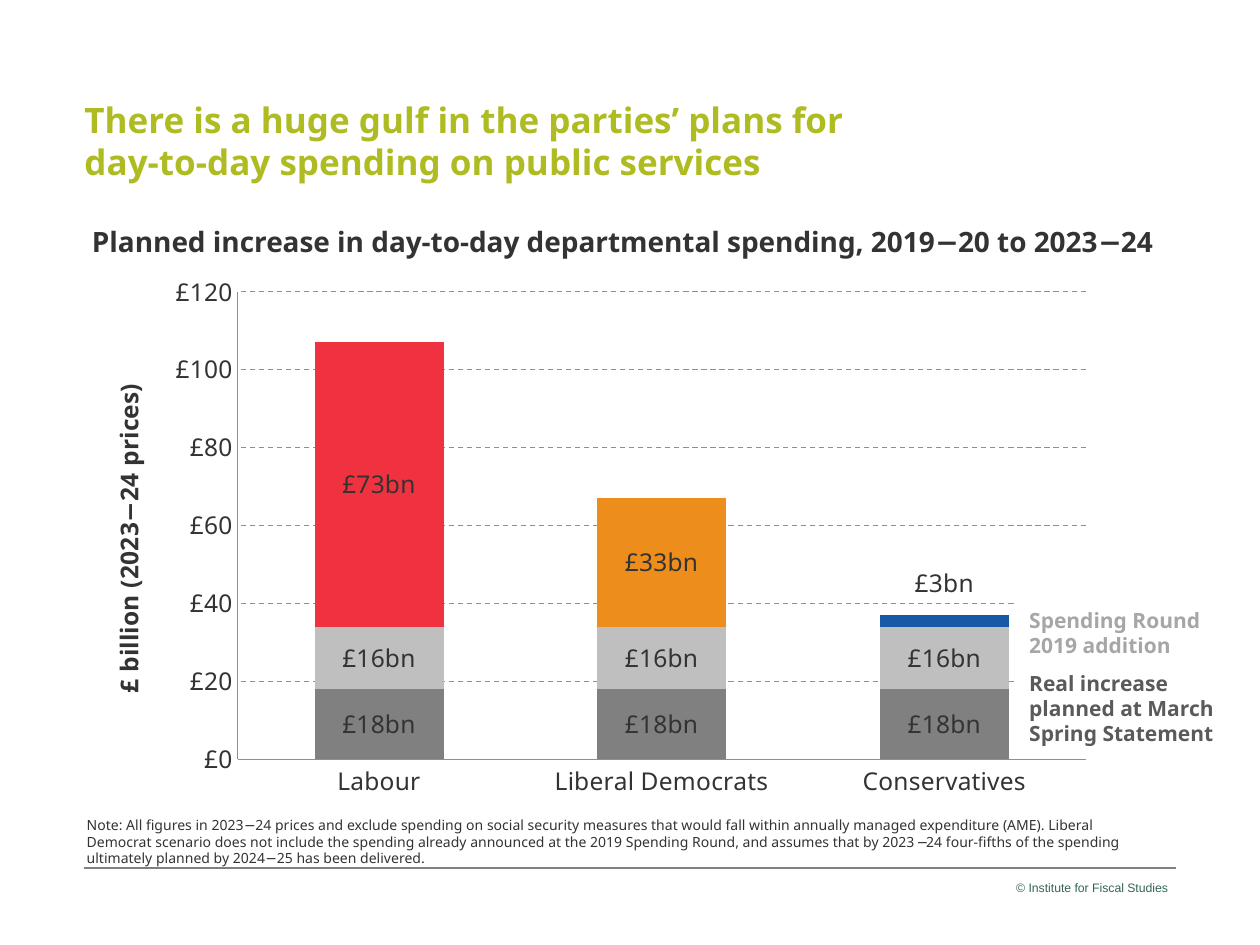
"""Build the slide on the parties' plans for day-to-day spending."""
from dataclasses import dataclass

from lxml import etree
from pptx import Presentation
from pptx.chart.data import CategoryChartData
from pptx.dml.color import RGBColor as RGB
from pptx.enum.chart import XL_CHART_TYPE as CT, XL_TICK_MARK as TICK
from pptx.enum.dml import MSO_LINE
from pptx.enum.shapes import MSO_CONNECTOR, MSO_SHAPE
from pptx.enum.text import MSO_ANCHOR, MSO_AUTO_SIZE, PP_ALIGN as AL
from pptx.oxml.ns import qn
from pptx.util import Inches, Pt


@dataclass(frozen=True)
class Theme:
    font: str = "Noto Sans"
    footer_font: str = "Arial"
    lime: str = "AFBC21"
    ink: str = "333333"
    axis: str = "8F8F8F"
    dark: str = "808080"
    light: str = "BFBFBF"
    red: str = "F03240"
    orange: str = "ED8D1C"
    blue: str = "1759A5"
    round_text: str = "A6A6A6"
    march_text: str = "5A5A5A"
    footer: str = "336750"
    white: str = "FFFFFF"
    title_size: int = 20
    subtitle_size: int = 16
    chart_size: int = 14
    key_size: int = 12
    note_size: int = 8
    footer_size: int = 7


T = Theme()


def style(font, size, color, bold=False, name=T.font):
    font.size, font.bold, font.name = Pt(size), bold, name
    font.color.rgb = RGB.from_string(color)


def set_layout(parent, index, **values):
    for old in parent.findall(qn("c:layout")):
        parent.remove(old)
    layout = etree.Element(qn("c:layout"))
    manual = etree.SubElement(layout, qn("c:manualLayout"))
    for tag, value in values.items():
        etree.SubElement(manual, qn(f"c:{tag}")).set("val", str(value))
    parent.insert(index, layout)


prs = Presentation()
prs.slide_width, prs.slide_height = Inches(10), Inches(7.5)
s = prs.slides.add_slide(prs.slide_layouts[5])

rule = s.shapes.add_connector(
    MSO_CONNECTOR.STRAIGHT, Inches(0.67), Inches(6.89), Inches(9.33), Inches(6.89))
rule.line.color.rgb = RGB.from_string(T.dark)
rule.line.width = Pt(0.75)
etree.SubElement(rule._element.spPr, qn("a:effectLst"))

title = s.shapes.title
title.left, title.top, title.width, title.height = map(Inches, (0.67, 0.78, 8.5, 1.47))
tf = title.text_frame
tf.margin_left = tf.margin_right = tf.margin_top = tf.margin_bottom = 0
tf.vertical_anchor = MSO_ANCHOR.TOP
tf.auto_size = MSO_AUTO_SIZE.NONE
tf.word_wrap = True
tf.text = ("There is a huge gulf in the parties’ plans for\v"
           "day-to-day spending on public services\n"
           "Planned increase in day-to-day departmental spending, 2019−20 to 2023−24")
heading, subtitle = tf.paragraphs
style(heading.font, T.title_size, T.lime, True)
style(subtitle.font, T.subtitle_size, T.ink, True)
for p in tf.paragraphs:
    p.alignment, p.line_spacing, p.space_before = AL.LEFT, 1.0, Pt(0)
subtitle.space_before = Pt(24)
subtitle._p.get_or_add_pPr().set("marL", str(Inches(0.06)))

data = CategoryChartData(number_format="0")
data.categories = ["Labour", "Liberal Democrats", "Conservatives"]
spending = [
    ("Series 1", [18] * 3, [T.dark] * 3),
    ("Series 2", [16] * 3, [T.light] * 3),
    ("Series 3", [73, 33, 3], [T.red, T.orange, T.blue]),
]
for name, values, colors in spending:
    data.add_series(name, values)
chart = s.shapes.add_chart(CT.COLUMN_STACKED, Inches(0.67), Inches(2.1),
                           Inches(8.11), Inches(4.33), data).chart
chart.has_legend = chart.has_title = False
style(chart.font, T.chart_size, T.ink)
plot = chart.plots[0]
plot.gap_width, plot.overlap, plot.vary_by_categories = 119, 100, False
set_layout(plot._element.getparent(), 0, layoutTarget="inner", xMode="edge",
           yMode="edge", x=0.15, y=0.05, w=0.83, h=0.857)

for series, (name, values, colors) in zip(plot.series, spending):
    series.format.fill.solid()
    series.format.fill.fore_color.rgb = RGB.from_string(colors[0])
    for i, (value, color) in enumerate(zip(values, colors)):
        point = series.points[i]
        point.format.fill.solid()
        point.format.fill.fore_color.rgb = RGB.from_string(color)
        r = point.data_label.text_frame.paragraphs[0].add_run()
        r.text = f"£{value}bn"
        style(r.font, T.chart_size, T.ink)
    for leader in series.data_labels._element.findall(qn("c:showLeaderLines")):
        leader.set("val", "0")
small_label = plot.series[2].points[2].data_label
set_layout(small_label._get_or_add_dLbl(), 1, x=0, y=-0.07)

val, cat = chart.value_axis, chart.category_axis
for axis in (val, cat):
    axis.major_tick_mark = axis.minor_tick_mark = TICK.NONE
    style(axis.tick_labels.font, T.chart_size, T.ink)
val.minimum_scale, val.maximum_scale, val.major_unit = 0, 120, 20
val.tick_labels.number_format = '"£"#,##0'
val.tick_labels.number_format_is_linked = False
for line in (val.format.line, cat.format.line, val.major_gridlines.format.line):
    line.color.rgb = RGB.from_string(T.axis)
    line.width = Pt(0.75)
val.major_gridlines.format.line.dash_style = MSO_LINE.DASH
r = val.axis_title.text_frame.paragraphs[0].add_run()
r.text = "£ billion (2023−24 prices)"
style(r.font, T.chart_size, T.ink, True)
body = val.axis_title.text_frame._txBody.find(qn("a:bodyPr"))
body.set("rot", "-5400000")
body.set("vert", "horz")
set_layout(val.axis_title._element, 1, xMode="edge", yMode="edge", x=0.02, y=0.21)

box = s.shapes.add_textbox(Inches(7.6), Inches(6.99), Inches(1.73), Inches(0.4))
tf = box.text_frame
tf.word_wrap = True
tf.margin_left = tf.margin_top = tf.margin_bottom = 0
tf.margin_right = Inches(0.06)
p = tf.paragraphs[0]
p.text, p.alignment = "© Institute for Fiscal Studies", AL.RIGHT
style(p.font, T.footer_size, T.footer, name=T.footer_font)

key = s.shapes.add_shape(
    MSO_SHAPE.RECTANGLE, Inches(8.07), Inches(4.77), Inches(1.81), Inches(0.89))
key.shadow.inherit = False
key.fill.solid()
key.fill.fore_color.rgb = RGB.from_string(T.white)
key.line.fill.background()
march = s.shapes.add_textbox(Inches(8.07), Inches(5.27), Inches(1.81), Inches(0.6))
note = s.shapes.add_textbox(Inches(0.59), Inches(6.43), Inches(8.74), Inches(0.5))
texts = [
    (key, "Spending Round 2019 addition", T.key_size, T.round_text, True),
    (march, "Real increase planned at March Spring Statement",
     T.key_size, T.march_text, True),
    (note, "Note: All figures in 2023−24 prices and exclude spending on social "
     "security measures that would fall within annually managed expenditure (AME). "
     "Liberal Democrat scenario does not include the spending already announced at "
     "the 2019 Spending Round, and assumes that by 2023−24 four-fifths of the "
     "spending ultimately planned by 2024−25 has been delivered.",
     T.note_size, T.ink, False),
]
for sp, text, size, color, bold in texts:
    tf = sp.text_frame
    tf.word_wrap = True
    tf.vertical_anchor = MSO_ANCHOR.TOP
    p = tf.paragraphs[0]
    p.text, p.alignment = text, AL.LEFT
    style(p.font, size, color, bold)

prs.save("out.pptx")
